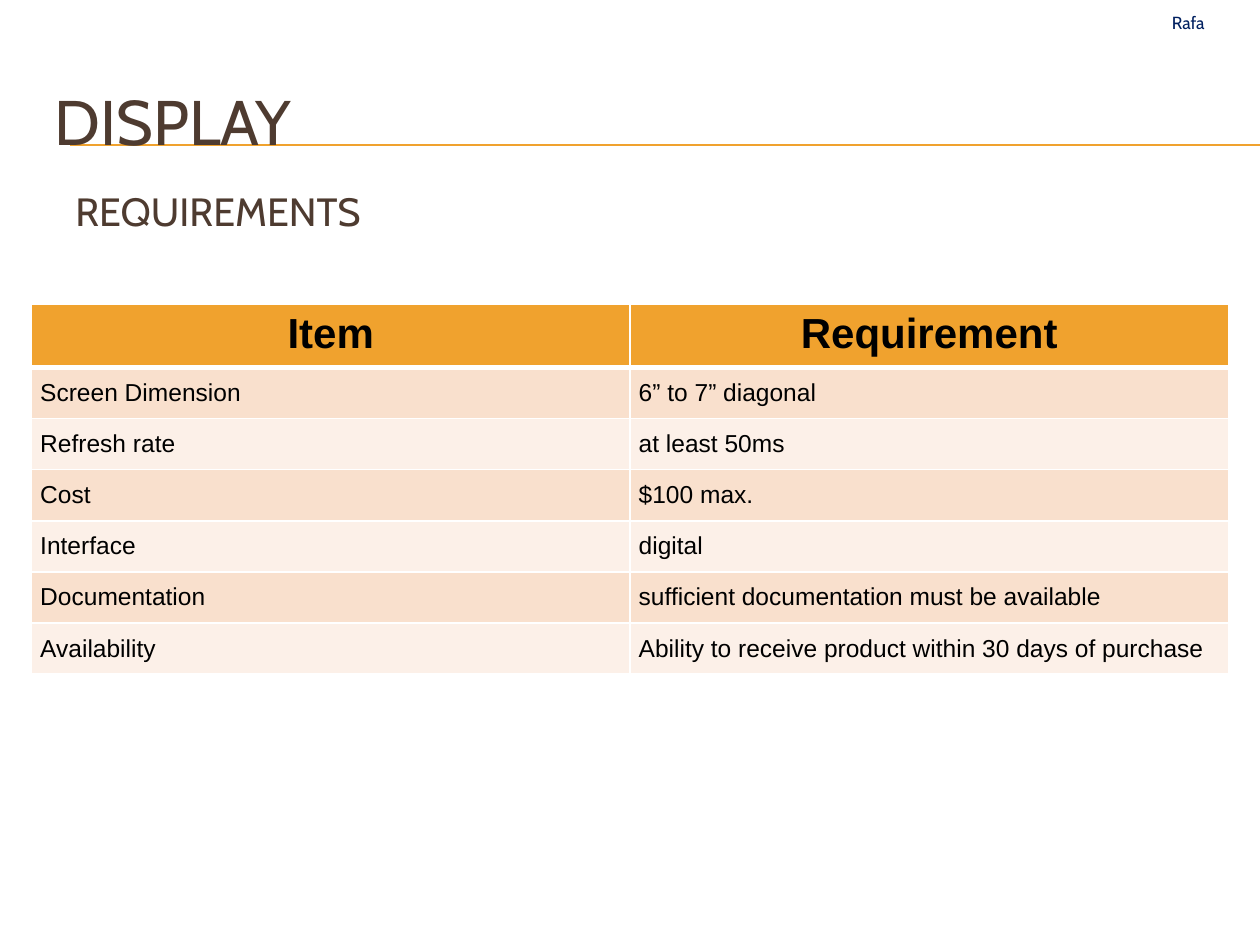
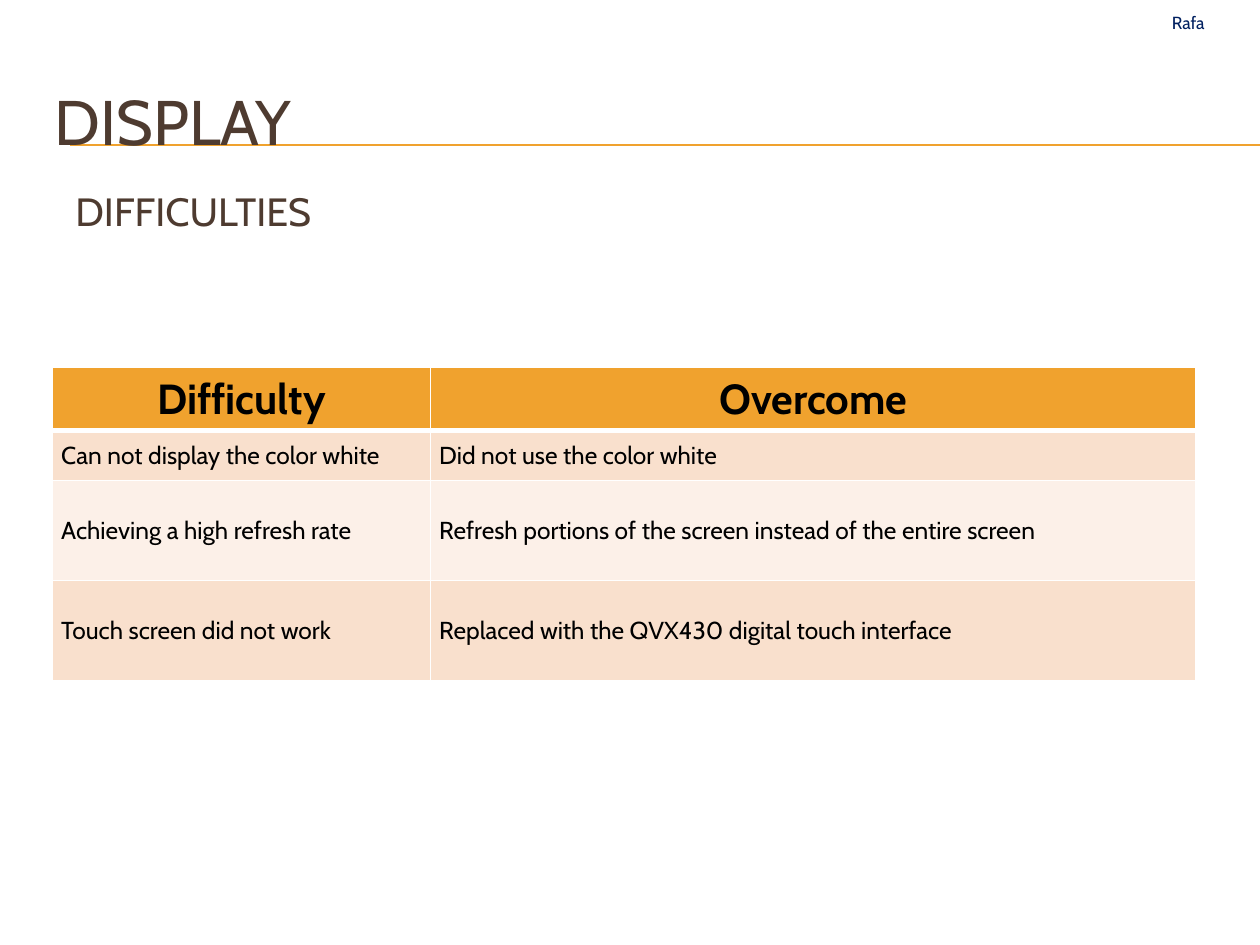
from dataclasses import dataclass

from lxml import etree
from pptx import Presentation
from pptx.dml.color import RGBColor
from pptx.enum.shapes import MSO_CONNECTOR
from pptx.enum.text import MSO_ANCHOR, MSO_AUTO_SIZE, PP_ALIGN
from pptx.oxml.ns import qn
from pptx.util import Pt

STRAIGHT = MSO_CONNECTOR.STRAIGHT
MIDDLE, TOP = MSO_ANCHOR.MIDDLE, MSO_ANCHOR.TOP
NO_FIT = MSO_AUTO_SIZE.NONE
LEFT, CENTER, JUSTIFY = PP_ALIGN.LEFT, PP_ALIGN.CENTER, PP_ALIGN.JUSTIFY
TITLE_ONLY = 5


@dataclass(frozen=True)
class Theme:
    accent: str = "F0A22E"
    heading: str = "4E3B30"
    presenter: str = "002060"
    ink: str = "000000"
    grid: str = "FFFFFF"
    bands: tuple = ("F9E0CD", "FCF0E8")
    font: str = "Cabin"
    title_size: float = 36
    subtitle_size: float = 22.5
    presenter_size: float = 10
    header_size: float = 24
    cell_size: float = 14
    rule_width: float = 0.75
    grid_width: float = 1
    header_line_width: float = 3


THEME = Theme()

REQUIREMENTS = [
    ("Item", "Requirement"),
    ("Screen Dimension", "6” to 7” diagonal"),
    ("Refresh rate", "at least 50ms"),
    ("Cost", "$100 max."),
    ("Interface", "digital"),
    ("Documentation", "sufficient documentation must be available"),
    ("Availability", "Ability to receive product within 30 days of purchase"),
]
DIFFICULTIES = [
    ("Difficulty", "Overcome"),
    ("Can not display the color white", "Did not use the color white"),
    ("Achieving a high refresh rate",
     "Refresh portions of the screen instead of the entire screen"),
    ("Touch screen did not work",
     "Replaced with the QVX430 digital touch interface"),
]


def write_text(frame, text, size, color, align, font=THEME.font, bold=False):
    frame.text = text
    para = frame.paragraphs[0]
    para.alignment = align
    para.font.name = font
    para.font.size = Pt(size)
    para.font.bold = bold
    para.font.color.rgb = RGBColor.from_string(color)
    return para


def add_rule(slide, y):
    rule = slide.shapes.add_connector(STRAIGHT, Pt(40.3), Pt(y), Pt(720), Pt(y))
    rule.line.color.rgb = RGBColor.from_string(THEME.accent)
    rule.line.width = Pt(THEME.rule_width)
    etree.SubElement(rule.element.spPr, qn("a:effectLst"))
    slide.shapes.element.insert(2, rule.element)


def set_title(slide, text):
    title = slide.shapes.title
    title.left, title.top, title.width, title.height = Pt(24), Pt(36), Pt(684), Pt(66)
    frame = title.text_frame
    frame.vertical_anchor = MIDDLE
    frame.auto_size = NO_FIT
    write_text(frame, text, THEME.title_size, THEME.heading, LEFT)


def add_label(slide, text, left, top, width, height, size, color, align, anchor):
    box = slide.shapes.add_textbox(Pt(left), Pt(top), Pt(width), Pt(height))
    frame = box.text_frame
    frame.word_wrap = True
    frame.vertical_anchor = anchor
    return write_text(frame, text, size, color, align)


def set_borders(cell, top, bottom):
    properties = cell._tc.get_or_add_tcPr()
    widths = {"lnL": THEME.grid_width, "lnR": THEME.grid_width,
              "lnT": top, "lnB": bottom}
    for index, (side, width) in enumerate(widths.items()):
        line = etree.Element(qn(f"a:{side}"), w=str(Pt(width)))
        fill = etree.SubElement(line, qn("a:solidFill"))
        etree.SubElement(fill, qn("a:srgbClr"), val=THEME.grid)
        properties.insert(index, line)


def style_cell(cell, text, row_index, font):
    is_header = row_index == 0
    if is_header:
        fill, size, align = THEME.accent, THEME.header_size, CENTER
    else:
        fill = THEME.bands[(row_index - 1) % 2]
        size, align = THEME.cell_size, JUSTIFY
        cell.vertical_anchor = MIDDLE
        cell.margin_left = cell.margin_right = Pt(5)
        cell.margin_top = cell.margin_bottom = 0
    cell.fill.solid()
    cell.fill.fore_color.rgb = RGBColor.from_string(fill)
    write_text(cell.text_frame, text, size, THEME.ink, align, font, is_header)
    top = THEME.header_line_width if row_index == 1 else THEME.grid_width
    bottom = THEME.header_line_width if is_header else THEME.grid_width
    set_borders(cell, top, bottom)


def add_grid(slide, records, left, top, widths, heights, font):
    table = slide.shapes.add_table(
        len(records), len(widths), Pt(left), Pt(top),
        Pt(sum(widths)), Pt(sum(heights))).table
    for column, width in zip(table.columns, widths):
        column.width = Pt(width)
    for row_index, (record, height) in enumerate(zip(records, heights)):
        table.rows[row_index].height = Pt(height)
        for column_index, text in enumerate(record):
            style_cell(table.cell(row_index, column_index), text, row_index, font)


def add_display_slide(deck, subtitle):
    slide = deck.slides.add_slide(deck.slide_layouts[TITLE_ONLY])
    for y in (83.2, 82.8):
        add_rule(slide, y)
    set_title(slide, "DISPLAY")
    para = add_label(slide, subtitle, 36, 108, 684, 30, THEME.subtitle_size,
                     THEME.heading, LEFT, MIDDLE)
    para.line_spacing = 0.8
    add_label(slide, "Rafa", 640, 3.6, 78, 19.4, THEME.presenter_size,
              THEME.presenter, CENTER, TOP)
    return slide


def main():
    deck = Presentation()
    deck.slide_width, deck.slide_height = Pt(720), Pt(540)

    requirements = add_display_slide(deck, "REQUIREMENTS")
    add_grid(requirements, REQUIREMENTS, 18, 174, (342, 342),
             [33.7] + [29.2] * 6, "Arial")

    difficulties = add_display_slide(deck, "DIFFICULTIES")
    add_grid(difficulties, DIFFICULTIES, 30, 210, (216, 437.5),
             (35.6, 28.6, 57.1, 57.1), THEME.font)

    deck.save("out.pptx")


if __name__ == "__main__":
    main()
